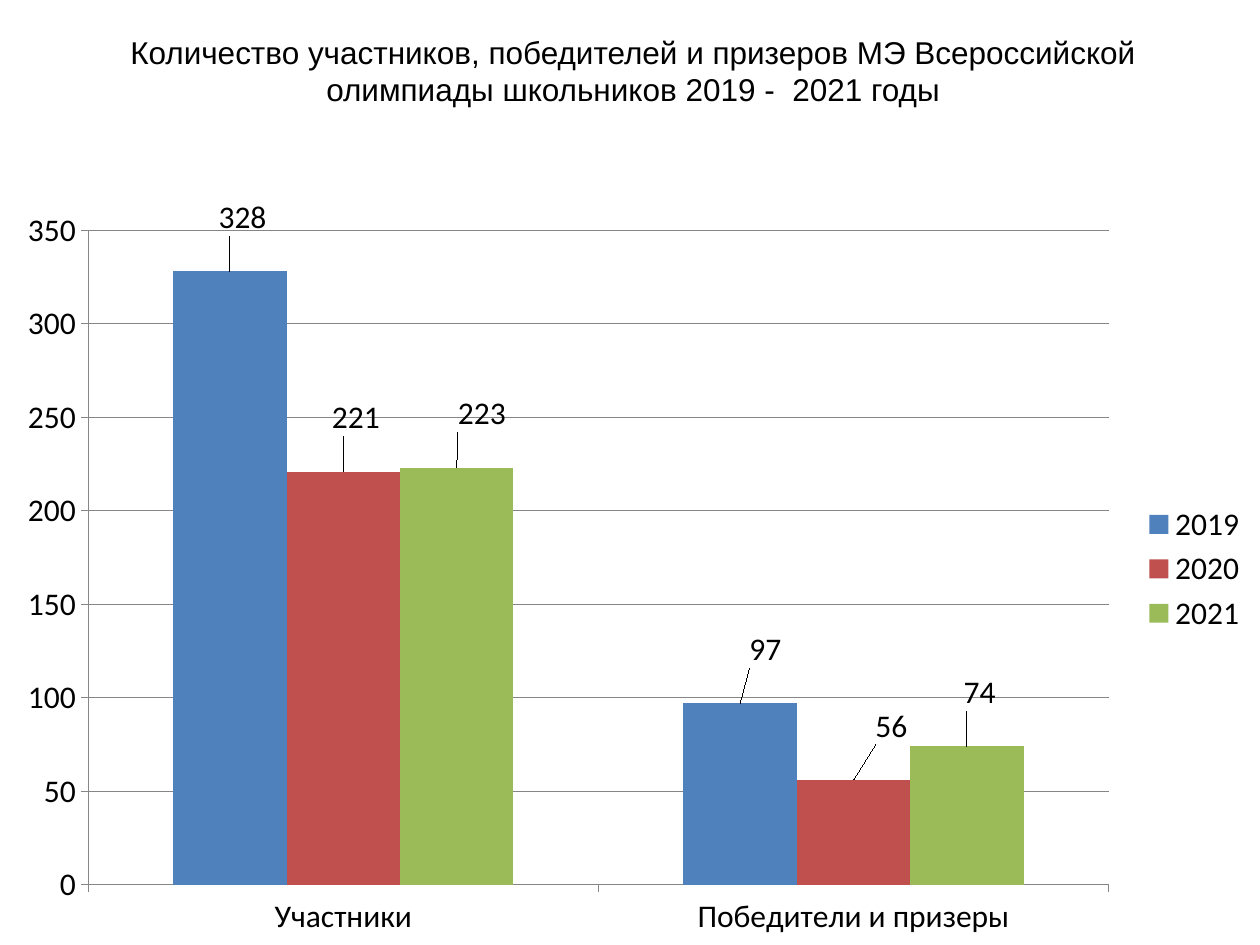
from lxml import etree
from pptx import Presentation
from pptx.chart.data import CategoryChartData
from pptx.dml.color import RGBColor
from pptx.enum.chart import (
    XL_CHART_TYPE as ChartType,
    XL_LABEL_POSITION as LabelPosition,
    XL_LEGEND_POSITION as LegendPosition,
    XL_TICK_MARK as TickMark,
)
from pptx.enum.text import MSO_AUTO_SIZE as AutoSize, PP_ALIGN as Align
from pptx.oxml.ns import qn
from pptx.util import Inches, Pt

TITLE = ("Количество участников, победителей и призеров МЭ Всероссийской "
         "олимпиады школьников 2019 -  2021 годы")
CATEGORIES = ["Участники", "Победители и призеры"]
# year, values, bar colour, label shift per category (fractions of the chart)
YEARS = [
    ("2019", (328, 97), "4F81BD", ((0.01, -0.04), (0.02, -0.04))),
    ("2020", (221, 56), "C0504D", ((0.01, -0.04), (0.03, -0.04))),
    ("2021", (223, 74), "9BBB59", ((0.02, -0.04), (0.01, -0.04))),
]
BLACK, GREY = "000000", "868686"


def rgb(hex_colour):
    return RGBColor.from_string(hex_colour)


def set_font(font, name):
    for attribute, value in {"name": name, "size": Pt(18)}.items():
        setattr(font, attribute, value)
    font.color.rgb = rgb(BLACK)


def make_layout(**values):
    """Return a c:layout element holding the given manual layout values."""
    layout = etree.Element(qn("c:layout"))
    manual = etree.SubElement(layout, qn("c:manualLayout"))
    for name, value in values.items():
        etree.SubElement(manual, qn(f"c:{name}")).set("val", str(value))
    return layout


def style_axis(axis):
    for attribute, value in {"major_tick_mark": TickMark.OUTSIDE,
                             "minor_tick_mark": TickMark.NONE}.items():
        setattr(axis, attribute, value)
    axis.format.line.color.rgb = rgb(GREY)


def style_series(series, colour, shifts):
    series.format.fill.solid()
    series.format.fill.fore_color.rgb = rgb(colour)
    series.invert_if_negative = False
    labels = series.data_labels
    labels.show_value = True
    for index, (x, y) in enumerate(shifts):
        series.points[index].data_label.position = LabelPosition.OUTSIDE_END
        label = labels._element.findall(qn("c:dLbl"))[index]
        label.find(qn("c:idx")).addnext(make_layout(x=x, y=y))


def add_results_chart(slide, left, top, width, height):
    data = CategoryChartData()
    data.categories = CATEGORIES
    for year, values, _, _ in YEARS:
        data.add_series(year, values)
    chart = slide.shapes.add_chart(
        ChartType.COLUMN_CLUSTERED, left, top, width, height, data).chart
    set_font(chart.font, "Calibri")
    chart.has_title = False
    chart.has_legend = True
    chart.legend.position = LegendPosition.RIGHT
    chart.legend.include_in_layout = False

    plot = chart.plots[0]
    for attribute, value in {"gap_width": 150, "overlap": 0,
                             "vary_by_categories": False}.items():
        setattr(plot, attribute, value)
    for series, (_, _, colour, shifts) in zip(plot.series, YEARS):
        style_series(series, colour, shifts)

    style_axis(chart.category_axis)
    value_axis = chart.value_axis
    style_axis(value_axis)
    for attribute, value in {"minimum_scale": 0, "maximum_scale": 350,
                             "major_unit": 50, "has_major_gridlines": True}.items():
        setattr(value_axis, attribute, value)
    value_axis.major_gridlines.format.line.color.rgb = rgb(GREY)

    plot_area = chart._chartSpace.chart.plotArea
    for layout in plot_area.findall(qn("c:layout")):
        plot_area.remove(layout)
    plot_area.insert(0, make_layout(layoutTarget="inner", xMode="edge", yMode="edge",
                                    x=0.07, y=0.05, w=0.81, h=0.87))


def add_title(slide, left, top, width, height):
    frame = slide.shapes.add_textbox(left, top, width, height).text_frame
    for attribute, value in {"word_wrap": True,
                             "auto_size": AutoSize.SHAPE_TO_FIT_TEXT}.items():
        setattr(frame, attribute, value)
    paragraph = frame.paragraphs[0]
    paragraph.alignment = Align.CENTER
    run = paragraph.add_run()
    run.text = TITLE
    set_font(run.font, "Arial")


def main():
    presentation = Presentation()
    presentation.slide_width, presentation.slide_height = Inches(10), Inches(7.5)
    slide = presentation.slides.add_slide(presentation.slide_layouts[6])
    add_results_chart(slide, Inches(0), Inches(1.53), Inches(10), Inches(5.97))
    add_title(slide, Inches(0.28), Inches(0.21), Inches(9.49), Inches(0.71))
    presentation.save("out.pptx")


if __name__ == "__main__":
    main()
